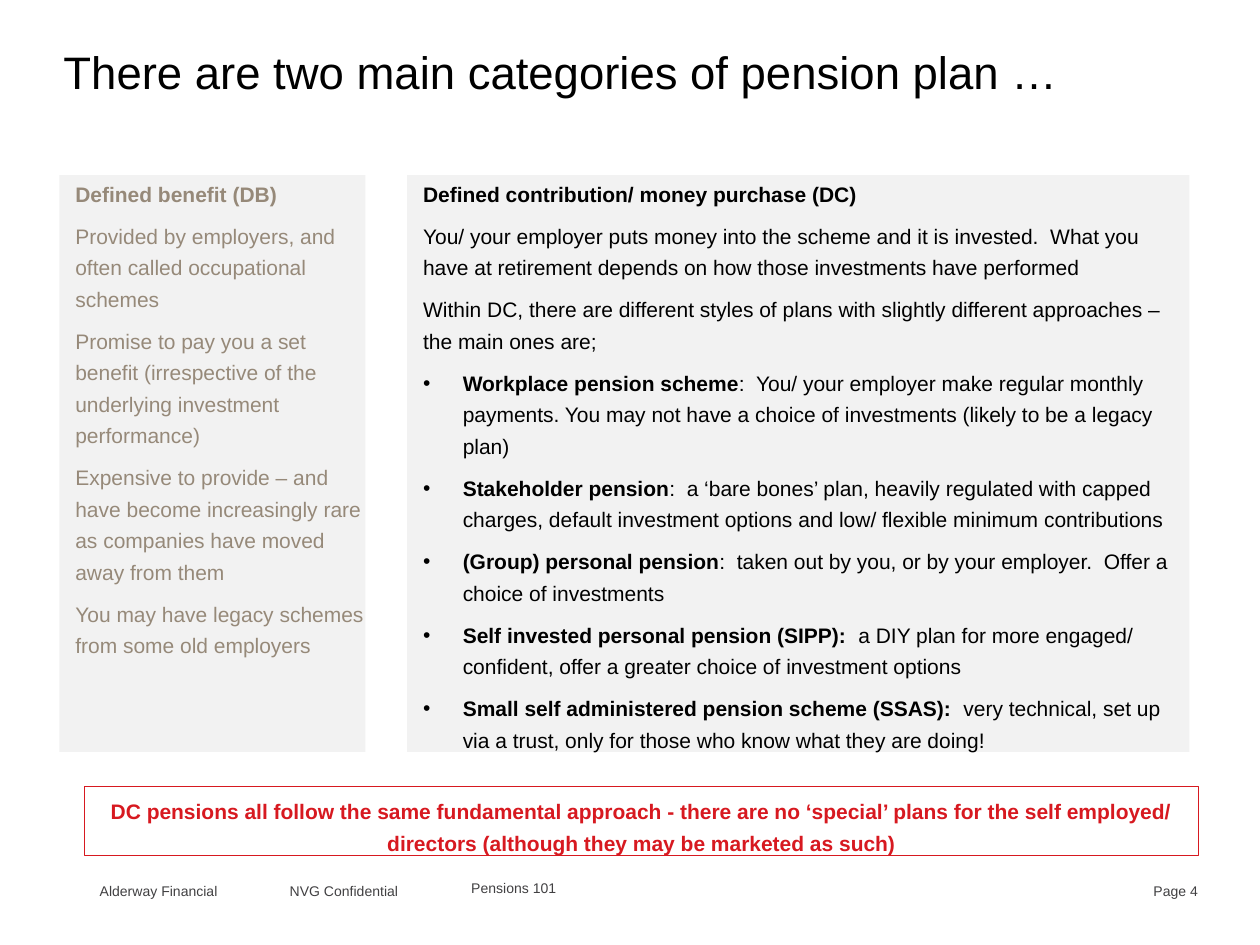
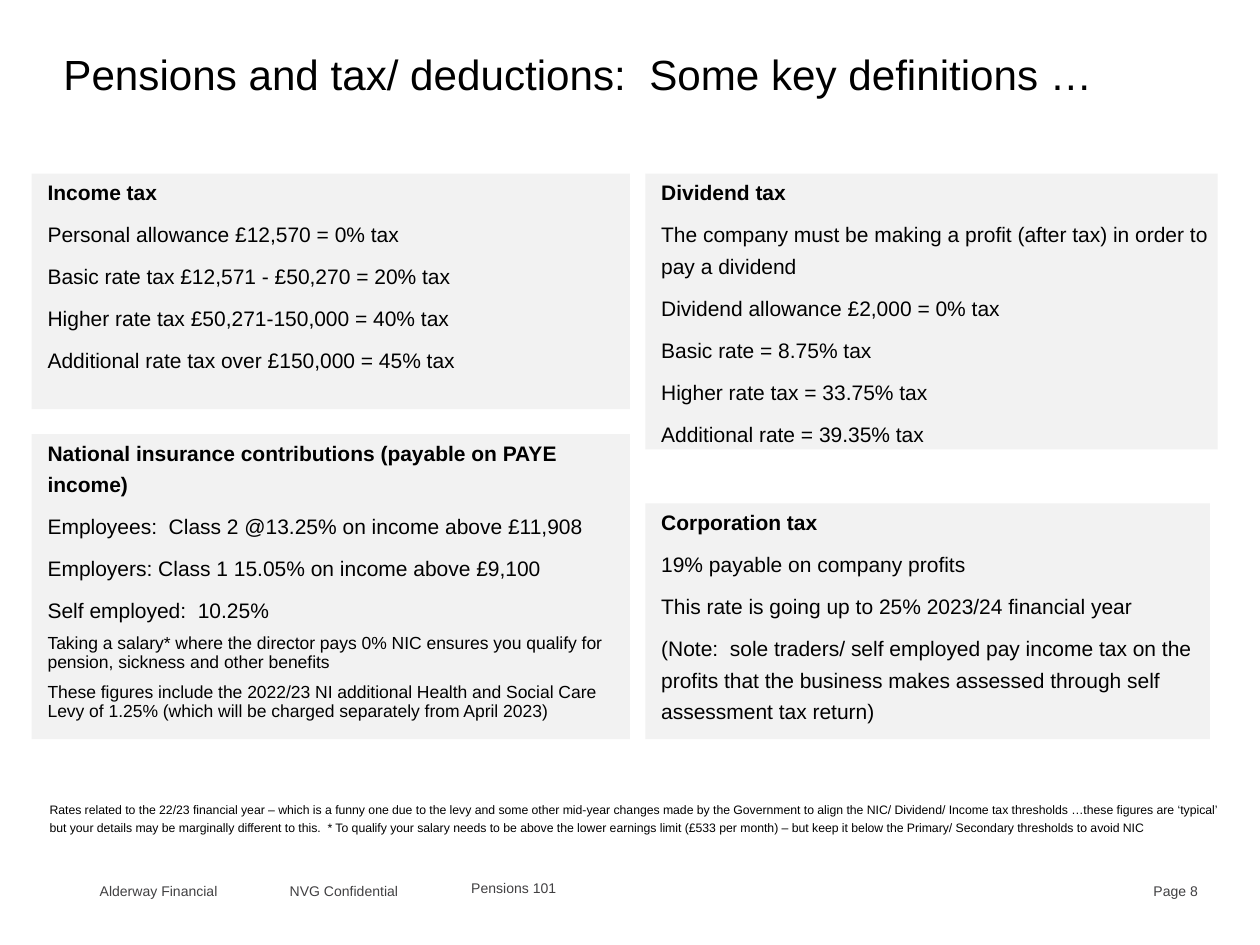
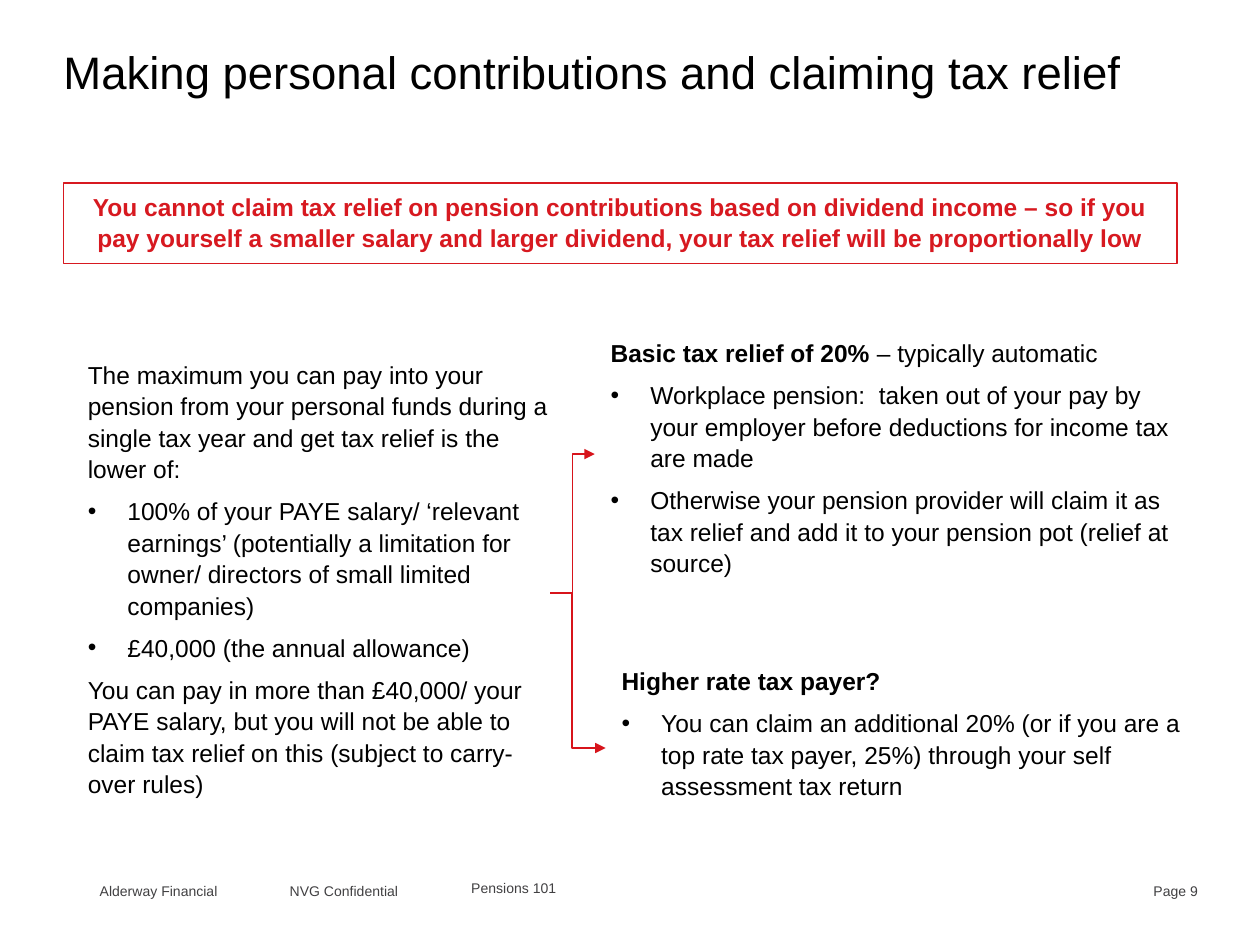
import dataclasses

import pptx
import pptx.dml.color
import pptx.enum.shapes
import pptx.enum.text
import pptx.oxml
import pptx.oxml.ns
import pptx.util

Cm, Pt = pptx.util.Cm, pptx.util.Pt
ALIGN = pptx.enum.text.PP_ALIGN

COLOURS = {
    "text": "000000",
    "muted": "968979",
    "footer": "414042",
    "panel": "F2F2F2",
    "alert": "D71920",
    "arrow": "D7141B",
}
FONT = "Arial"
INDENT, BULLET_INDENT, HANGING = 0.32, 1.12, 0.8


@dataclasses.dataclass
class Box:
    """A region in centimetres."""
    left: float
    top: float
    width: float
    height: float

    def lengths(self):
        return [Cm(value) for value in dataclasses.astuple(self)]


# Text helpers

def colour(name):
    return pptx.dml.color.RGBColor.from_string(COLOURS[name])


def add_span(para, text, size, bold, ink):
    span = para.add_run()
    span.text = text
    span.font.name = FONT
    span.font.size = Pt(size)
    span.font.bold = bold
    span.font.color.rgb = colour(ink)


def write(para, text, *, lead="", size=12, bold=False, ink="text", align=ALIGN.LEFT,
          leading=18, after=6, indent=INDENT, bullet=False):
    """Write one paragraph; lead is an opening part in bold."""
    properties = para._p.get_or_add_pPr()
    if bullet:
        properties.set("marL", str(Cm(BULLET_INDENT)))
        properties.set("indent", str(-Cm(HANGING)))
        namespace = pptx.oxml.ns.nsdecls("a")
        for mark in (f'<a:buFont {namespace} typeface="{FONT}"/>',
                     f'<a:buChar {namespace} char="•"/>'):
            properties.append(pptx.oxml.parse_xml(mark))
    else:
        properties.set("marL", str(Cm(indent)))
        properties.set("indent", "0")
    para.alignment = align
    para.space_after = Pt(after)
    if leading:
        para.line_spacing = Pt(leading)
    if lead:
        add_span(para, lead, size, True, ink)
    if text:
        add_span(para, text, size, bold, ink)


def fill_frame(shape, entries, margin=(0, 0), **shared):
    """Each entry is a text or a pair of text and its own format."""
    frame = shape.text_frame
    frame.word_wrap = True
    frame.vertical_anchor = pptx.enum.text.MSO_ANCHOR.TOP
    frame.margin_left = frame.margin_right = Cm(margin[0])
    frame.margin_top = frame.margin_bottom = Cm(margin[1])
    for index, entry in enumerate(entries):
        text, own = (entry, {}) if isinstance(entry, str) else entry
        para = frame.add_paragraph() if index else frame.paragraphs[0]
        write(para, text, **{**shared, **own})


def heading(text, rest=""):
    return rest, {"lead": text}


def bullet(text, lead=""):
    return text, {"lead": lead, "bullet": True}


# Parts of a page

def add_text(page, box, entries, **shared):
    shape = page.shapes.add_textbox(*box.lengths())
    fill_frame(shape, entries, **shared)
    return shape


def add_rectangle(page, box):
    shape = page.shapes.add_shape(
        pptx.enum.shapes.MSO_SHAPE.RECTANGLE, *box.lengths())
    shape.shadow.inherit = False
    return shape


def add_panel(page, box, entries, **shared):
    panel = add_rectangle(page, box)
    panel.fill.solid()
    panel.fill.fore_color.rgb = colour("panel")
    panel.line.fill.background()
    fill_frame(panel, entries, **shared)


def add_callout(page, box, text, size):
    callout = add_rectangle(page, box)
    callout.fill.background()
    callout.line.color.rgb = colour("alert")
    callout.line.width = Pt(0.75)
    fill_frame(callout, [text], margin=(0.25, 0.13), size=size, bold=True,
               ink="alert", align=ALIGN.CENTER, indent=0)


def add_arrow(page, source, target, bend=50000):
    """Elbow arrow from the right side of source to the left side of target."""
    arrow = page.shapes.add_connector(
        pptx.enum.shapes.MSO_CONNECTOR.ELBOW, 0, 0, 0, 0)
    arrow.begin_connect(source, 3)
    arrow.end_connect(target, 1)
    arrow.line.color.rgb = colour("arrow")
    arrow.line.width = Pt(1)
    namespace = pptx.oxml.ns.nsdecls("a")
    properties = arrow._element.spPr
    guides = properties.find(".//" + pptx.oxml.ns.qn("a:avLst"))
    guides.append(pptx.oxml.parse_xml(
        f'<a:gd {namespace} name="adj1" fmla="val {bend}"/>'))
    arrow.line._get_or_add_ln().append(
        pptx.oxml.parse_xml(f'<a:tailEnd {namespace} type="triangle"/>'))
    properties.append(pptx.oxml.parse_xml(f"<a:effectLst {namespace}/>"))


def add_footer(page, box, number):
    labels = [
        ("Alderway Financial", 0, 0.05, 3, ALIGN.LEFT),
        ("NVG Confidential", 3.83, 0.05, 3.1, ALIGN.LEFT),
        ("Pensions 101", 7.49, 0, 10.87, ALIGN.LEFT),
        (f"Page {number}", box.width - 2.84, 0.05, 2.84, ALIGN.RIGHT),
    ]
    for text, left, top, width, align in labels:
        place = Box(box.left + left, box.top + top, width, box.height)
        add_text(page, place, [text], size=8, ink="footer", align=align,
                 leading=None, after=0, indent=0)


def add_page(deck, title, number, title_size=26):
    page = deck.slides.add_slide(deck.slide_layouts[6])
    add_footer(page, Box(2.01, 17.74, 22.14, 0.41), number)
    add_text(page, Box(1.28, 0.94, 21.44, 2.51), [title],
             size=title_size, leading=30, indent=0)
    return page


# Pages

def add_categories_page(deck, box):
    page = add_page(deck, "There are two main categories of pension plan …", 4)
    benefit_width, gap = 6.17, 0.84
    contribution_left = benefit_width + gap
    add_panel(page, Box(box.left, box.top, benefit_width, box.height), [
        heading("Defined benefit (DB)"),
        "Provided by employers, and often called occupational schemes",
        "Promise to pay you a set benefit (irrespective of the underlying investment "
        "performance)",
        "Expensive to provide – and have become increasingly rare as companies have "
        "moved away from them",
        "You may have legacy schemes from some old employers",
    ], ink="muted")
    add_panel(page, Box(box.left + contribution_left, box.top,
                        box.width - contribution_left, box.height), [
        heading("Defined contribution/ money purchase (DC)"),
        "You/ your employer puts money into the scheme and it is invested.  What you "
        "have at retirement depends on how those investments have performed",
        "Within DC, there are different styles of plans with slightly different "
        "approaches – the main ones are;",
        bullet(":  You/ your employer make regular monthly payments. You may not have "
               "a choice of investments (likely to be a legacy plan)",
               "Workplace pension scheme"),
        bullet(":  a ‘bare bones’ plan, heavily regulated with capped charges, default "
               "investment options and low/ flexible minimum contributions",
               "Stakeholder pension"),
        bullet(":  taken out by you, or by your employer.  Offer a choice of investments",
               "(Group) personal pension"),
        bullet("a DIY plan for more engaged/ confident, offer a greater choice of "
               "investment options", "Self invested personal pension (SIPP):  "),
        bullet("very technical, set up via a trust, only for those who know what they "
               "are doing!", "Small self administered pension scheme (SSAS):  "),
    ])
    add_callout(page, Box(box.left + 0.51, box.top + box.height + 0.69, 22.45, 1.4),
                "DC pensions all follow the same fundamental approach - there are no "
                "‘special’ plans for the self employed/ directors (although they may be "
                "marketed as such)", 12)


def add_definitions_page(deck, box):
    page = add_page(deck, "Pensions and tax/ deductions:  Some key definitions …", 8, 24.1)
    bottom = box.top + box.height
    right = box.left + 12.37
    small = {"size": 10, "leading": 11}
    add_panel(page, Box(box.left, box.top, 12.06, 4.75), [
        heading("Income tax"),
        "Personal allowance £12,570 = 0% tax",
        "Basic rate tax £12,571 - £50,270 = 20% tax",
        "Higher rate tax £50,271-150,000 = 40% tax",
        "Additional rate tax over £150,000 = 45% tax",
    ])
    add_panel(page, Box(box.left, bottom - 6.15, 12.06, 6.15), [
        heading("National insurance contributions (payable on PAYE income)"),
        "Employees:  Class 2 @13.25% on income above £11,908",
        "Employers: Class 1 15.05% on income above £9,100",
        "Self employed:  10.25%",
        ("Taking a salary* where the director pays 0% NIC ensures you qualify for "
         "pension, sickness and other benefits", small),
        ("These figures include the 2022/23 NI additional Health and Social Care Levy "
         "of 1.25% (which will be charged separately from April 2023)", small),
    ])
    add_panel(page, Box(right, box.top, 11.54, 5.56), [
        heading("Dividend tax"),
        "The company must be making a profit (after tax) in order to pay a dividend",
        "Dividend allowance £2,000 = 0% tax",
        "Basic rate = 8.75% tax",
        "Higher rate tax = 33.75% tax",
        "Additional rate = 39.35% tax",
    ])
    add_panel(page, Box(right, bottom - 4.75, 11.38, 4.75), [
        heading("Corporation tax"),
        "19% payable on company profits",
        "This rate is going up to 25% 2023/24 financial year",
        "(Note:  sole traders/ self employed pay income tax on the profits that the "
        "business makes assessed through self assessment tax return)",
    ])
    add_text(page, Box(box.left + 0.04, bottom + 1.22, 23.88, 1.35), [
        "Rates related to the 22/23 financial year – which is a funny one due to the levy "
        "and some other mid-year changes made by the Government to align the NIC/ "
        "Dividend/ Income tax thresholds …these figures are ‘typical’ but your details "
        "may be marginally different to this.  * To qualify your salary needs to be above "
        "the lower earnings limit (£533 per month) – but keep it below the Primary/ "
        "Secondary thresholds to avoid NIC",
    ], size=7, leading=10, after=0)


def add_relief_page(deck, box):
    page = add_page(deck, "Making personal contributions and claiming tax relief", 9)
    add_callout(page, Box(box.left, box.top, box.width, 1.63),
                "You cannot claim tax relief on pension contributions based on dividend "
                "income – so if you pay yourself a smaller salary and larger dividend, "
                "your tax relief will be proportionally low", 14)
    limit = add_text(page, Box(box.left + 0.17, box.top + 3.52, 9.64, 9.5), [
        "The maximum you can pay into your pension from your personal funds during a "
        "single tax year and get tax relief is the lower of:",
        bullet("100% of your PAYE salary/ ‘relevant earnings’ (potentially a limitation "
               "for owner/ directors of small limited companies)"),
        bullet("£40,000 (the annual allowance)"),
        "You can pay in more than £40,000/ your PAYE salary, but you will not be able to "
        "claim tax relief on this (subject to carry-over rules)",
    ], size=14)
    basic = add_text(page, Box(box.left + 10.71, box.top + 3.09, 11.73, 4.75), [
        heading("Basic tax relief of 20% ", "– typically automatic"),
        bullet("Workplace pension:  taken out of your pay by your employer before "
               "deductions for income tax are made"),
        bullet("Otherwise your pension provider will claim it as tax relief and add it "
               "to your pension pot (relief at source)"),
    ], size=14)
    higher = add_text(page, Box(box.left + 10.93, box.top + 9.7, 11.73, 3.38), [
        heading("Higher rate tax payer?"),
        bullet("You can claim an additional 20% (or if you are a top rate tax payer, 25%) "
               "through your self assessment tax return"),
    ], size=14)
    add_arrow(page, limit, basic)
    add_arrow(page, limit, higher, bend=39500)


def main():
    deck = pptx.Presentation()
    deck.slide_width, deck.slide_height = Cm(25.4), Cm(19.05)
    add_categories_page(deck, Box(1.2, 3.53, 22.78, 11.63))
    add_definitions_page(deck, Box(0.64, 3.5, 23.9, 11.4))
    add_relief_page(deck, Box(1.28, 3.69, 22.45, 13.03))
    deck.save("out.pptx")


if __name__ == "__main__":
    main()
